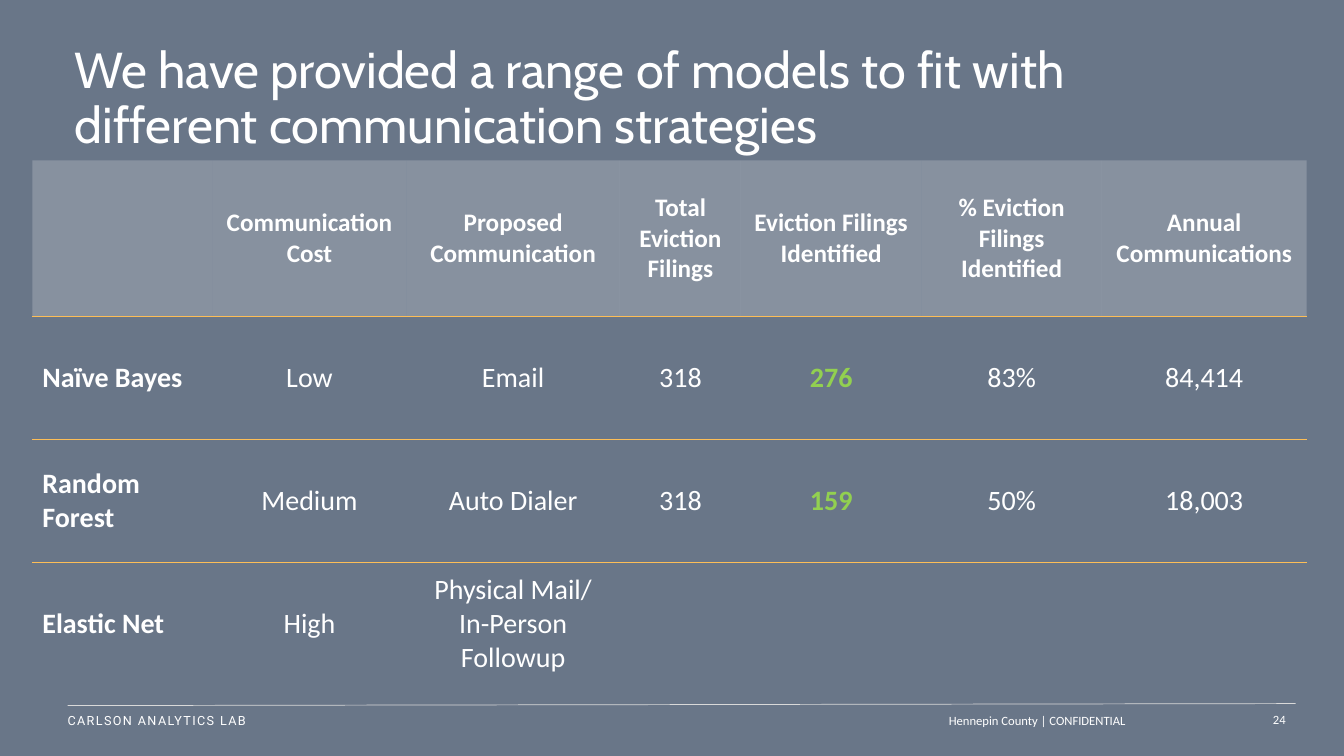
from dataclasses import dataclass

from lxml import etree
from pptx import Presentation
from pptx.dml.color import RGBColor
from pptx.enum.shapes import MSO_CONNECTOR
from pptx.enum.text import MSO_ANCHOR, PP_ALIGN
from pptx.oxml.ns import qn
from pptx.util import Emu, Inches, Pt

LEFT, CENTER, RIGHT = PP_ALIGN.LEFT, PP_ALIGN.CENTER, PP_ALIGN.RIGHT
MIDDLE = MSO_ANCHOR.MIDDLE
STRAIGHT = MSO_CONNECTOR.STRAIGHT

COLORS = {
    "background": "697688",
    "white": "FFFFFF",
    "rule": "D9D9D9",
    "gold": "FDBE57",
    "green": "92D050",
}
SLIDE_WIDTH, SLIDE_HEIGHT = Inches(13.33), Inches(7.5)
GRID_COLUMNS, GRID_ROWS = 133.3, 75
PLAIN_STYLE = "{2D5ABB26-0587-4C30-8999-92F81FD0307C}"

COLUMN_SPANS = [17.9, 19.2, 21.2, 12, 17.9, 17.9, 20.3]
ROW_SPANS = [15.5, 12.2, 12.2, 12.2]
IDENTIFIED_COLUMN = 4
MODEL_ROWS = [
    ["", "Communication Cost", "Proposed Communication", "Total Eviction Filings",
     "Eviction Filings Identified", "% Eviction Filings Identified",
     "Annual Communications"],
    ["Naïve Bayes", "Low", "Email", "318", "276", "83%", "84,414"],
    ["Random Forest", "Medium", "Auto Dialer", "318", "159", "50%", "18,003"],
    ["Elastic Net", "High", "Physical Mail/\nIn-Person\nFollowup", "", "", "", ""],
]


@dataclass
class Style:
    font: str
    size: float
    color: str = "white"
    bold: bool = False
    align: PP_ALIGN = LEFT
    line_spacing: float = 1.0
    tracking: int = 0


@dataclass
class Label:
    text: str
    column: float
    row: float
    columns: float
    rows: float
    style: Style
    inset: float = 1


LABELS = [
    Label("CARLSON ANALYTICS LAB", 6.7, 69.8, 32.4, 3.3,
          Style("Roboto", 9, tracking=100), inset=0),
    Label("We have provided a range of models to fit with different "
          "communication strategies", 6.4, 4.4, 112, 11,
          Style("Cabin", 36, line_spacing=0.9)),
    Label("Hennepin County | CONFIDENTIAL", 53.2, 69.9, 59.4, 3.2,
          Style("Calibri", 9, align=RIGHT)),
    Label("24", 124, 69.8, 4.5, 3.2, Style("Calibri", 9, align=RIGHT), inset=0),
]


def across(columns: float) -> Emu:
    return Emu(round(SLIDE_WIDTH * columns / GRID_COLUMNS))


def down(rows: float) -> Emu:
    return Emu(round(SLIDE_HEIGHT * rows / GRID_ROWS))


def rgb(name: str) -> RGBColor:
    return RGBColor.from_string(COLORS[name])


def write(text_frame, text: str, style: Style) -> None:
    text_frame.text = text
    for para in text_frame.paragraphs:
        para.alignment = style.align
        para.line_spacing = style.line_spacing
        for span in para.runs:
            span.font.name = style.font
            span.font.size = Pt(style.size)
            span.font.bold = style.bold
            span.font.color.rgb = rgb(style.color)
            if style.tracking:
                span.font._element.set("spc", str(style.tracking))


def add_label(page, label: Label) -> None:
    box = page.shapes.add_textbox(across(label.column), down(label.row),
                                  across(label.columns), down(label.rows))
    frame = box.text_frame
    frame.word_wrap = True
    frame.vertical_anchor = MIDDLE
    frame.margin_left = across(label.inset)
    write(frame, label.text, label.style)


def add_footer_rule(page) -> None:
    rule = page.shapes.add_connector(STRAIGHT, across(6.7), down(70),
                                     across(128.5), down(69.8))
    rule.line.color.rgb = rgb("rule")
    rule.line.width = Pt(0.5)
    etree.SubElement(rule._element.spPr, qn("a:effectLst"))


def add_bottom_border(cell) -> None:
    border = etree.Element(qn("a:lnB"), w=str(Pt(1)))
    fill = etree.SubElement(border, qn("a:solidFill"))
    etree.SubElement(fill, qn("a:srgbClr"), val=COLORS["gold"])
    cell._tc.get_or_add_tcPr().insert(0, border)


def shade_header(cell) -> None:
    cell.fill.solid()
    cell.fill.fore_color.rgb = rgb("white")
    color = cell._tc.tcPr.find(".//" + qn("a:srgbClr"))
    etree.SubElement(color, qn("a:alpha"), val="20000")


def cell_style(row: int, column: int) -> Style:
    header, identified = row == 0, column == IDENTIFIED_COLUMN
    return Style(
        "Calibri",
        18 if header else 20,
        color="green" if identified and not header else "white",
        bold=header or identified or column == 0,
        align=LEFT if column == 0 else CENTER,
    )


def add_model_table(page) -> None:
    frame = page.shapes.add_table(
        len(ROW_SPANS), len(COLUMN_SPANS), across(3.2), down(15.9),
        across(sum(COLUMN_SPANS)), down(sum(ROW_SPANS)))
    table = frame.table
    table.first_row = table.horz_banding = False
    frame._element.find(".//" + qn("a:tableStyleId")).text = PLAIN_STYLE
    for column, span in zip(table.columns, COLUMN_SPANS):
        column.width = across(span)
    for row, span in zip(table.rows, ROW_SPANS):
        row.height = down(span)
    for row, texts in enumerate(MODEL_ROWS):
        for column, text in enumerate(texts):
            cell = table.cell(row, column)
            cell.vertical_anchor = MIDDLE
            write(cell.text_frame, text, cell_style(row, column))
            if row == 0:
                shade_header(cell)
            else:
                cell.fill.background()
            if row < len(MODEL_ROWS) - 1:
                add_bottom_border(cell)


def main() -> None:
    deck = Presentation()
    deck.slide_width, deck.slide_height = SLIDE_WIDTH, SLIDE_HEIGHT
    page = deck.slides.add_slide(deck.slide_layouts[6])
    page.background.fill.solid()
    page.background.fill.fore_color.rgb = rgb("background")
    add_footer_rule(page)
    for label in LABELS:
        add_label(page, label)
    add_model_table(page)
    deck.save("out.pptx")


if __name__ == "__main__":
    main()
